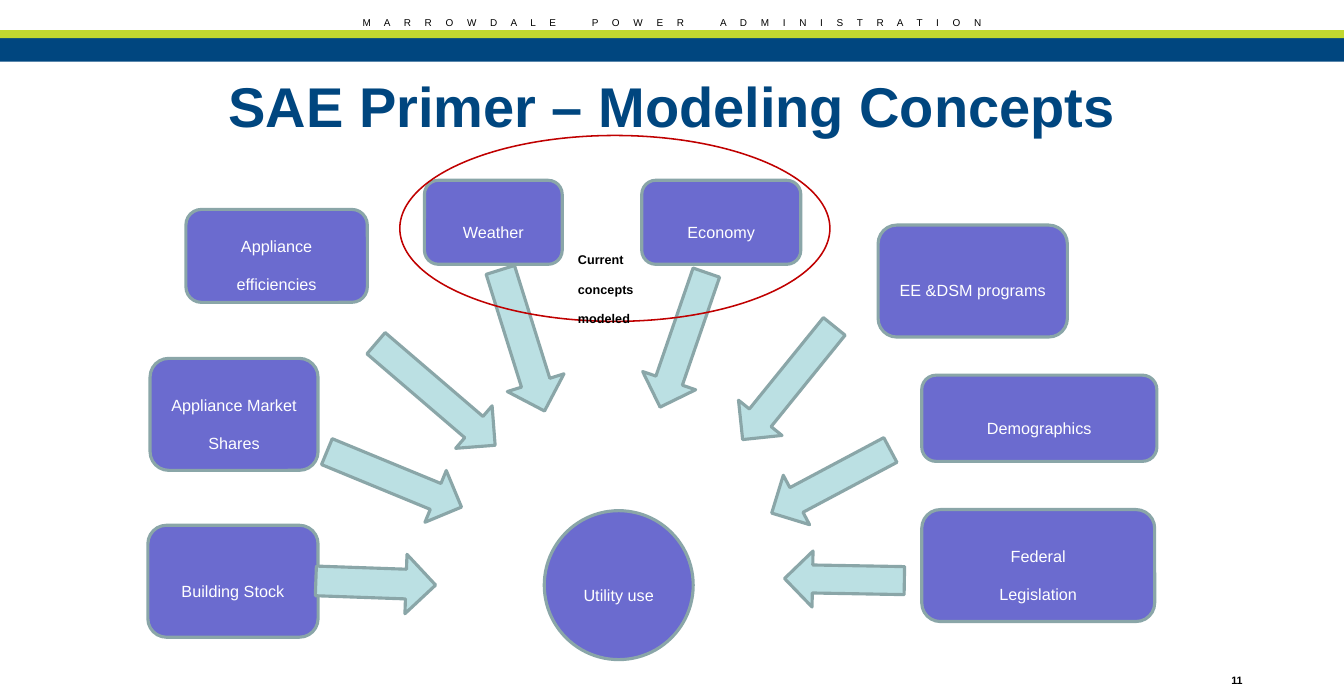
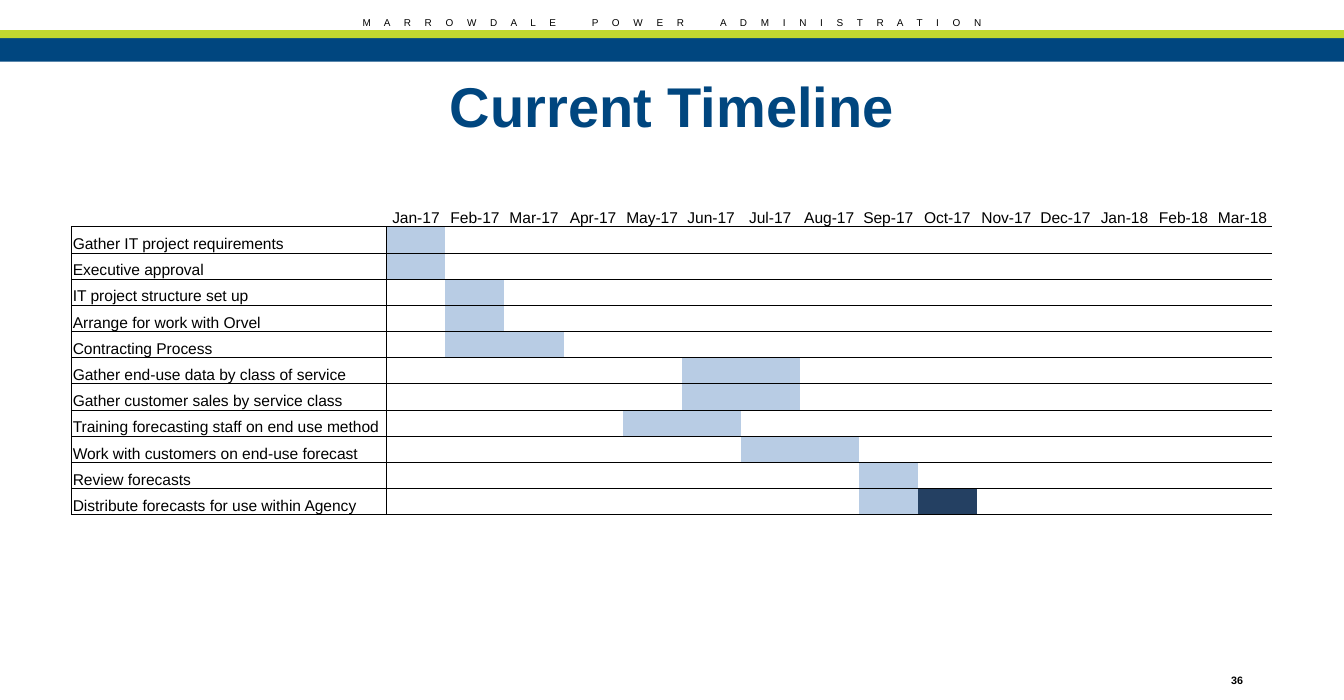
from lxml.etree import SubElement
from pptx import Presentation
from pptx.dml.color import RGBColor
from pptx.enum.shapes import MSO_SHAPE
from pptx.enum.text import MSO_ANCHOR, PP_ALIGN
from pptx.oxml.ns import qn
from pptx.util import Inches, Pt

COLORS = {
    "navy": "00467F", "lime": "C1D82F", "black": "000000", "white": "FFFFFF",
    "violet": "6B6BCF", "sage": "8AA6A8", "aqua": "BBE0E3", "red": "C00000",
    "bar": "B8CCE4", "milestone": "244062",
}
FONT = "Arial"
SLIDE_WIDTH, SLIDE_HEIGHT = 12, 6.25
AGENCY = "MARROWDALE POWER ADMINISTRATION"

CONCEPTS = [
    ("Appliance Market\u0020Shares", (0.02, 1.99, 1.5, 1), (1.95, 2.42, 0.5, 1.3), 292.4),
    ("Building Stock", (0, 3.48, 1.52, 1), (1.77, 3.46, 0.53, 1.07), 272),
    ("Weather", (2.47, 0.4, 1.23, 0.75), (3.08, 1.17, 0.53, 1.32), 342.6),
    ("Economy", (4.41, 0.4, 1.42, 0.75), (4.53, 1.19, 0.5, 1.27), 19),
    ("Appliance efficiencies", (0.34, 0.66, 1.62, 0.83), (2.32, 1.61, 0.5, 1.4), 310.6),
    ("EE &DSM programs", (6.52, 0.8, 1.69, 1), (5.47, 1.56, 0.5, 1.3), 39),
    ("Demographics", (6.91, 2.14, 2.1, 0.77), (5.85, 2.49, 0.5, 1.2), 62),
    ("Federal\nLegislation", (6.91, 3.34, 2.08, 1), (5.97, 3.43, 0.5, 1.07), 91),
]

MONTHS = ["Jan-17", "Feb-17", "Mar-17", "Apr-17", "May-17", "Jun-17", "Jul-17", "Aug-17",
          "Sep-17", "Oct-17", "Nov-17", "Dec-17", "Jan-18", "Feb-18", "Mar-18"]
TASKS = [
    ("Gather IT project requirements", ["Jan-17"]),
    ("Executive approval", ["Jan-17"]),
    ("IT project structure set up", ["Feb-17"]),
    ("Arrange for work with Orvel", ["Feb-17"]),
    ("Contracting Process", ["Feb-17", "Mar-17"]),
    ("Gather end-use data by class of service", ["Jun-17", "Jul-17"]),
    ("Gather customer sales by service class", ["Jun-17", "Jul-17"]),
    ("Training forecasting staff on end use method", ["May-17", "Jun-17"]),
    ("Work with customers on end-use forecast", ["Jul-17", "Aug-17"]),
    ("Review forecasts", ["Sep-17"]),
    ("Distribute forecasts for use within Agency", ["Sep-17", "Oct-17"]),
]
MILESTONE = ("Distribute forecasts for use within Agency", "Oct-17")


def color(name):
    """Return the named colour."""
    return RGBColor.from_string(COLORS[name])


def place(origin, box):
    """Return the lengths of a box given relative to an origin."""
    left, top, width, height = box
    return [Inches(n) for n in (origin[0] + left, origin[1] + top, width, height)]


def add_span(para, text, size, ink="black", bold=False, lowered=False, spacing=0):
    """Add one formatted run to a paragraph."""
    span = para.add_run()
    span.text = text
    span.font.name = FONT
    span.font.size = Pt(size)
    span.font.bold = bold
    span.font.color.rgb = color(ink)
    properties = span.font._element
    if lowered:
        properties.set("baseline", "-25000")
    if spacing:
        properties.set("spc", str(round(spacing * 100)))


def write(frame, text, align=PP_ALIGN.CENTER, anchor=MSO_ANCHOR.MIDDLE, **style):
    """Fill a text frame with one paragraph for each line of text."""
    frame.word_wrap = True
    frame.vertical_anchor = anchor
    for number, line in enumerate(text.split("\n")):
        para = frame.add_paragraph() if number else frame.paragraphs[0]
        para.alignment = align
        add_span(para, line, **style)


def add_text(page, position, text, **style):
    """Add a text box and return its frame."""
    frame = page.shapes.add_textbox(*position).text_frame
    write(frame, text, **style)
    return frame


def add_figure(page, kind, position, fill=None, line=None, weight=2, turn=0):
    """Add a preset shape with a flat fill and line."""
    figure = page.shapes.add_shape(kind, *position)
    figure.shadow.inherit = False
    figure.rotation = turn
    if fill:
        figure.fill.solid()
        figure.fill.fore_color.rgb = color(fill)
    else:
        figure.fill.background()
    if line:
        figure.line.color.rgb = color(line)
        figure.line.width = Pt(weight)
    else:
        figure.line.fill.background()
    return figure


def add_header(page, origin):
    """Draw the spaced agency name and the two bands."""
    for fill, top, height in (("navy", 0.34, 0.21), ("lime", 0.27, 0.07)):
        add_figure(page, MSO_SHAPE.RECTANGLE,
                   place(origin, (0, top, SLIDE_WIDTH, height)), fill)
    frame = page.shapes.add_textbox(*place(origin, (0, 0, SLIDE_WIDTH, 0.25))).text_frame
    frame.word_wrap = True
    para = frame.paragraphs[0]
    para.alignment = PP_ALIGN.CENTER
    for number, word in enumerate(AGENCY.split()):
        if number:
            add_span(para, " ", 11, lowered=True, spacing=17.8)
        add_span(para, " ".join(word), 11, lowered=True, spacing=3.55)


def add_page(deck, title, number):
    """Add a slide with header, title and page number."""
    page = deck.slides.add_slide(deck.slide_layouts[6])
    add_header(page, (0, 0))
    add_text(page, place((0, 0), (0, 0.61, SLIDE_WIDTH, 0.65)), title,
             size=36, ink="navy", bold=True)
    add_text(page, place((0, 0), (10.6, 5.85, 0.89, 0.33)), number,
             size=12, bold=True, lowered=True)
    return page


def add_concept(page, kind, position, text):
    """Add a labelled violet shape."""
    figure = add_figure(page, kind, position, "violet", "sage")
    write(figure.text_frame, text, size=18, ink="white", lowered=True)


def add_diagram(page, origin):
    """Draw the concepts around the utility use circle."""
    add_concept(page, MSO_SHAPE.OVAL, place(origin, (3.54, 3.35, 1.33, 1.33)), "Utility use")
    for text, box, arrow, turn in CONCEPTS:
        add_concept(page, MSO_SHAPE.ROUNDED_RECTANGLE, place(origin, box), text)
        add_figure(page, MSO_SHAPE.DOWN_ARROW, place(origin, arrow), "aqua", "sage", turn=turn)
    add_figure(page, MSO_SHAPE.OVAL, place(origin, (2.25, 0, 3.84, 1.66)), line="red", weight=1)
    frame = add_text(page, place(origin, (3.67, 1.02, 0.84, 0.57)), "Current concepts modeled",
                     align=PP_ALIGN.LEFT, size=14, bold=True, lowered=True)
    frame.margin_left = Inches(0.17)
    frame.margin_right = Inches(0.05)


def set_borders(cell, sides):
    """Draw thin black borders on the given sides and none elsewhere."""
    properties = cell._tc.get_or_add_tcPr()
    for side in "LRTB":
        line = SubElement(properties, qn(f"a:ln{side}"), w=str(Pt(0.5)))
        if side in sides:
            fill = SubElement(line, qn("a:solidFill"))
            SubElement(fill, qn("a:srgbClr"), val=COLORS["black"])
        else:
            SubElement(line, qn("a:noFill"))


def format_cell(cell, text="", align=PP_ALIGN.LEFT, sides="", fill=None):
    """Set the text, borders and fill of a table cell."""
    cell.margin_left = cell.margin_right = cell.margin_top = Inches(0.01)
    cell.margin_bottom = 0
    cell.vertical_anchor = MSO_ANCHOR.BOTTOM
    para = cell.text_frame.paragraphs[0]
    para.alignment = align
    if text:
        add_span(para, text, 10)
    else:
        SubElement(para._p, qn("a:endParaRPr"), sz="1000")
    set_borders(cell, sides)
    if fill:
        cell.fill.solid()
        cell.fill.fore_color.rgb = color(fill)
    else:
        cell.fill.background()


def add_timeline(page, box):
    """Draw the schedule table with one row for each task."""
    left, top, width, height = box
    rows, columns = len(TASKS) + 1, len(MONTHS) + 1
    table = page.shapes.add_table(rows, columns, *place((left, top), (0, 0, width, height))).table
    table.first_row = table.horz_banding = False
    task_width = 2.81
    for number, column in enumerate(table.columns):
        column.width = Inches((width - task_width) / len(MONTHS) if number else task_width)
    for row in table.rows:
        row.height = Inches(height / rows)

    format_cell(table.cell(0, 0), sides="B")
    for column, month in enumerate(MONTHS, 1):
        format_cell(table.cell(0, column), month, PP_ALIGN.CENTER, "B")
    for row, (task, active) in enumerate(TASKS, 1):
        format_cell(table.cell(row, 0), task, sides="LRTB")
        for column, month in enumerate(MONTHS, 1):
            fill = "bar" if month in active else None
            if (task, month) == MILESTONE:
                fill = "milestone"
            format_cell(table.cell(row, column), sides="LTB" if column == 1 else "TB", fill=fill)


def main():
    """Build and save the deck."""
    deck = Presentation()
    deck.slide_width = Inches(SLIDE_WIDTH)
    deck.slide_height = Inches(SLIDE_HEIGHT)
    add_diagram(add_page(deck, "SAE Primer – Modeling Concepts", "11"), (1.32, 1.21))
    add_timeline(add_page(deck, "Current Timeline", "36"), (0.64, 1.79, 10.72, 2.81))
    deck.save("out.pptx")


if __name__ == "__main__":
    main()
